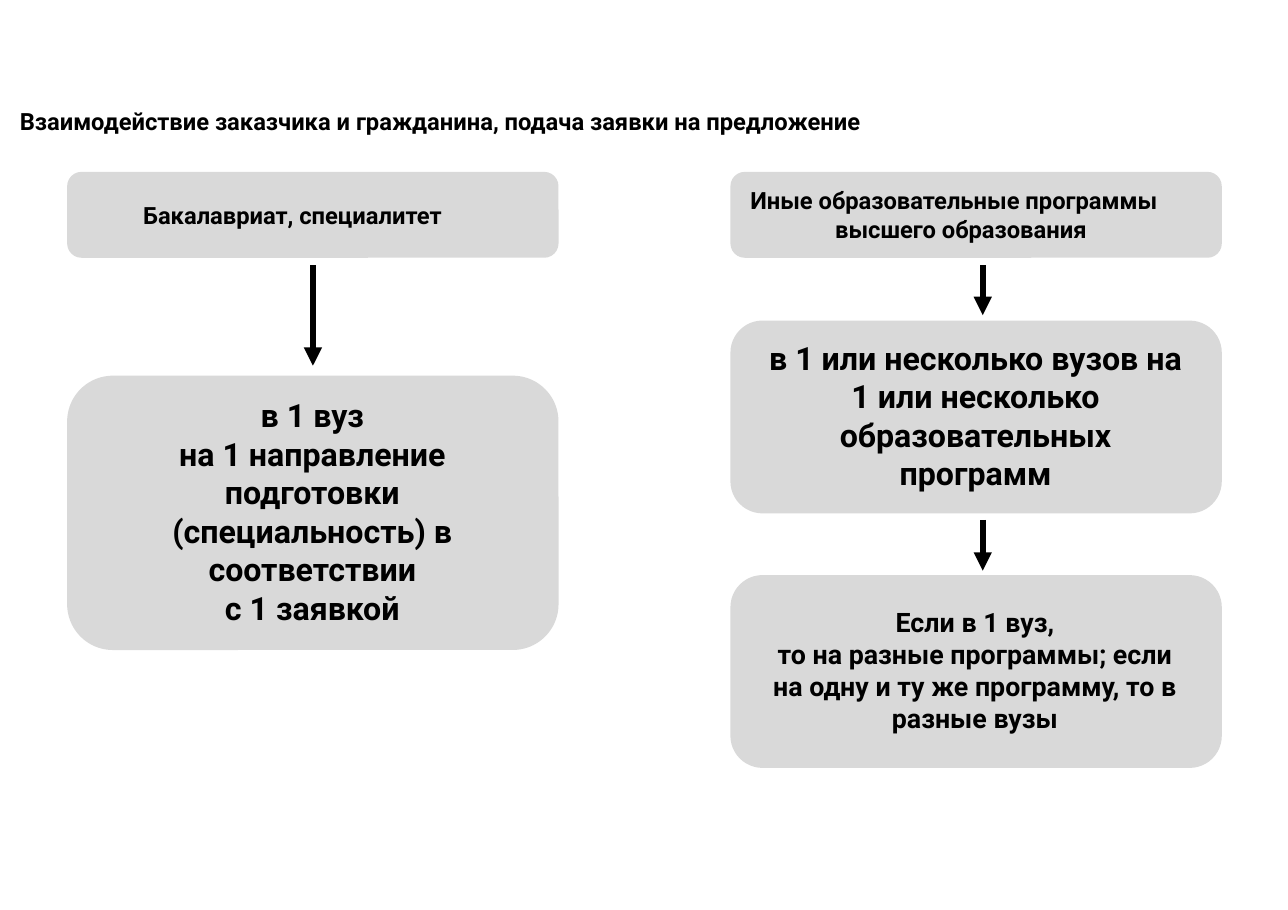
"""Builds the slide on how a citizen applies to a customer's offer."""
from lxml import etree
from pptx import Presentation
from pptx.dml.color import RGBColor
from pptx.enum.shapes import MSO_CONNECTOR, MSO_SHAPE
from pptx.enum.text import MSO_ANCHOR, MSO_AUTO_SIZE, PP_ALIGN
from pptx.oxml.ns import qn
from pptx.util import Pt

STRAIGHT = MSO_CONNECTOR.STRAIGHT
ROUNDED = MSO_SHAPE.ROUNDED_RECTANGLE
TOP = MSO_ANCHOR.TOP
NO_AUTOFIT = MSO_AUTO_SIZE.NONE
LEFT, CENTER = PP_ALIGN.LEFT, PP_ALIGN.CENTER

BLACK = RGBColor(0x00, 0x00, 0x00)
GREY = RGBColor(0xD9, 0xD9, 0xD9)
PX = 9144
TITLE_ONLY = 5
CARD_WIDTH = 446
BACHELOR_X, OTHER_X = 61, 663

CARDS = [
    (BACHELOR_X, 156, 78),
    (OTHER_X, 156, 78),
    (BACHELOR_X, 341, 249),
    (OTHER_X, 291, 175),
    (OTHER_X, 522, 175),
]
ARROWS = [(284, 241, 332), (892, 241, 286), (892, 472, 518)]
HEADING = "Взаимодействие заказчика и гражданина, подача заявки на предложение"
CAPTIONS = [
    ((130, 180, 310, 29), 15.5, LEFT, 2, ["Бакалавриат, специалитет"]),
    ((146, 358, 275, 213), 21, CENTER, 1, [
        "в 1 вуз",
        "на 1 направление подготовки (специальность) в соответствии",
        "с 1 заявкой",
    ]),
    ((698, 306, 375, 143), 21, CENTER, 1, [
        "в 1 или несколько вузов на 1 или несколько образовательных программ",
    ]),
    ((697, 549, 376, 120), 17.5, CENTER, 1, [
        "Если в 1 вуз,",
        "то на разные программы; если на одну и ту же программу, то в разные вузы",
    ]),
]
OTHER_PROGRAMMES = ((679, 167, 413, 56), 15.5, LEFT, 1, [
    "Иные образовательные программы высшего образования",
])


def apply(target, values):
    """Set every attribute named in values on target."""
    for name, value in values.items():
        setattr(target, name, value)


def write(holder, size, align, inset_top, lines):
    """Fill a text holder with bold paragraphs in the slide's font."""
    frame = holder.text_frame
    apply(frame, {
        "word_wrap": True, "auto_size": NO_AUTOFIT, "vertical_anchor": TOP,
        "margin_left": 0, "margin_right": 0, "margin_bottom": 0,
        "margin_top": inset_top * PX,
    })
    frame.text = "\n".join(lines)
    for index, paragraph in enumerate(frame.paragraphs):
        apply(paragraph, {
            "alignment": align, "line_spacing": 1.0,
            "space_before": Pt(0 if index else 1),
        })
        for run in paragraph.runs:
            apply(run.font, {"name": "Roboto", "size": Pt(size), "bold": True})
            run.font.color.rgb = BLACK


def add_heading(slide):
    """Place the heading in the title placeholder."""
    heading = slide.shapes.title
    apply(heading, {
        "left": 18 * PX, "top": 95 * PX, "width": 861 * PX, "height": 29 * PX,
    })
    write(heading, 15.5, LEFT, 2, [HEADING])


def add_card(slide, x, y, height):
    """Add a grey rounded card."""
    card = slide.shapes.add_shape(
        ROUNDED, x * PX, y * PX, CARD_WIDTH * PX, height * PX)
    card.shadow.inherit = False
    card.fill.solid()
    card.fill.fore_color.rgb = GREY
    card.line.fill.background()


def add_caption(slide, box, size, align, inset_top, lines):
    """Add a text box and return it."""
    caption = slide.shapes.add_textbox(*(length * PX for length in box))
    write(caption, size, align, inset_top, lines)
    return caption


def add_arrow(slide, x, start, end):
    """Add a thick arrow pointing down."""
    arrow = slide.shapes.add_connector(
        STRAIGHT, x * PX, start * PX, x * PX, end * PX)
    arrow.line.width = Pt(4)
    arrow.line.color.rgb = BLACK
    etree.SubElement(arrow.line._get_or_add_ln(), qn("a:tailEnd"), type="triangle")
    etree.SubElement(arrow._element.spPr, qn("a:effectLst"))


def main():
    """Build and save the slide."""
    deck = Presentation()
    apply(deck, {"slide_width": 1169 * PX, "slide_height": 826 * PX})
    slide = deck.slides.add_slide(deck.slide_layouts[TITLE_ONLY])
    add_heading(slide)
    for card in CARDS:
        add_card(slide, *card)
    for caption in CAPTIONS:
        add_caption(slide, *caption)
    programmes = add_caption(slide, *OTHER_PROGRAMMES)
    hanging = programmes.text_frame.paragraphs[0]
    hanging.line_spacing = 1.02
    properties = hanging._p.get_or_add_pPr()
    properties.set("marL", str(79 * PX))
    properties.set("indent", str(-77 * PX))
    for arrow in ARROWS:
        add_arrow(slide, *arrow)
    deck.save("out.pptx")


if __name__ == "__main__":
    main()
